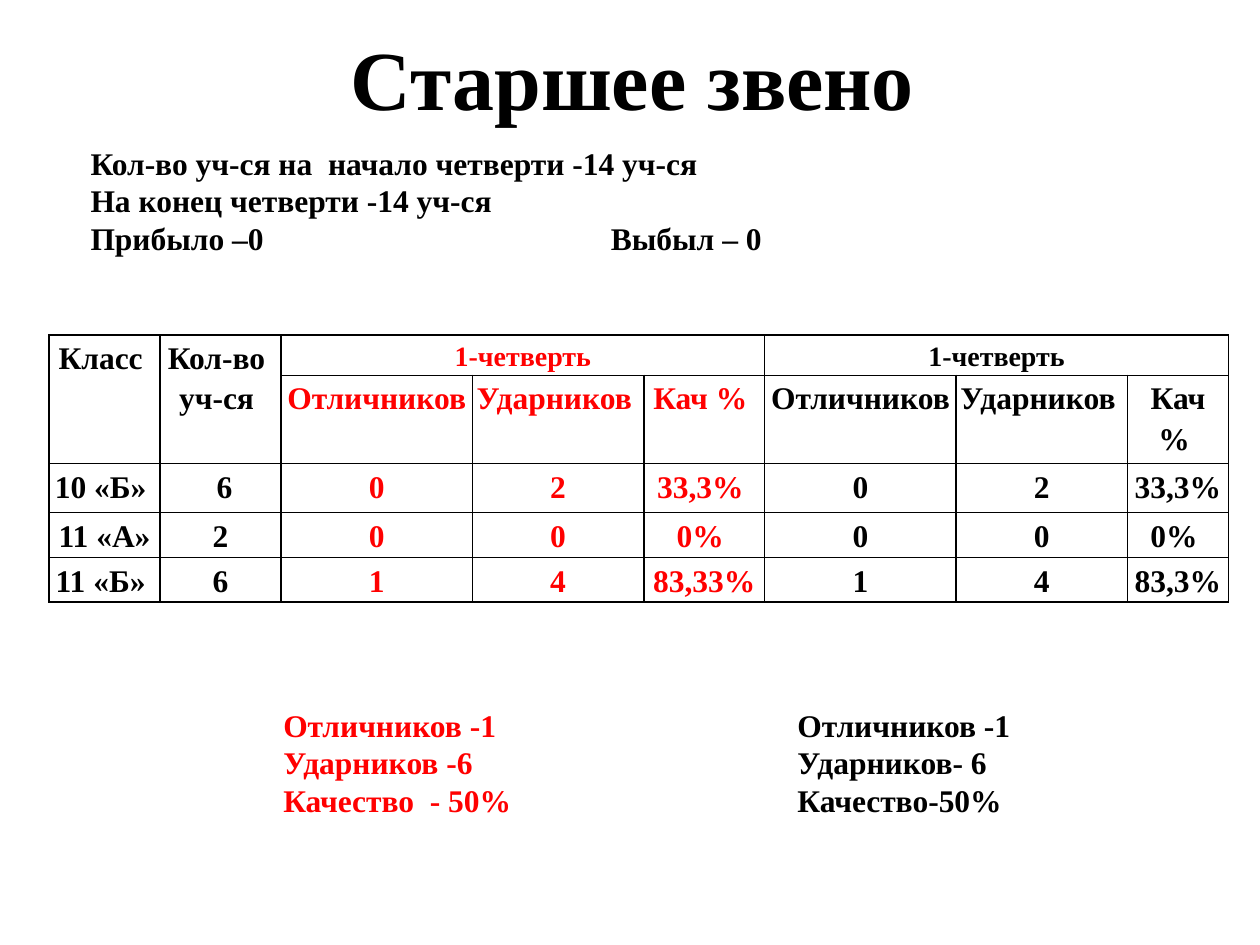
from lxml.etree import SubElement
from pptx import Presentation
from pptx.dml.color import RGBColor
from pptx.enum.text import MSO_ANCHOR, PP_ALIGN
from pptx.oxml.ns import qn
from pptx.util import Inches, Pt

# Content
TITLE = "Старшее звено"
INTRO = [
    ["Кол-во уч-ся на  начало четверти -14 уч-ся"],
    ["На конец четверти -14 уч-ся"],
    ["Прибыло –0", "\tВыбыл – 0"],
]
TERM = "1-четверть"
HEADS = ["Отличников ", "Ударников ", "Кач % "]
GRID = [
    ["Класс ", "Кол-во \nуч-ся ", TERM, "", "", TERM, "", ""],
    ["", "", *HEADS, *HEADS],
    ["10 «Б» ", " 6", "0", "2", "33,3% ", "0", "2", "33,3% "],
    ["11 «А»", "2", "0", "0", "0% ", "0", "0", "0% "],
    ["11 «Б» ", "6", "1", "4", "83,33%", "1", "4", "83,3%"],
]
MERGES = [(0, 0, 1, 0), (0, 1, 1, 1), (0, 2, 0, 4), (0, 5, 0, 7)]
TOTALS = [
    ["\tОтличников -1", "\tОтличников -1"],
    ["\tУдарников -6", "\tУдарников- 6"],
    ["\tКачество  - 50%", "\tКачество-50%"],
]

# Layout in inches
COLS = [0.88, 0.96, 1.52, 1.36, 0.96, 1.52, 1.36, 0.8]
ROWS = [0.32, 0.7, 0.39, 0.35, 0.35]
RED_COLS = range(2, 5)

THEME = {
    "font": "Times New Roman",
    "black": RGBColor(0, 0, 0),
    "red": RGBColor(255, 0, 0),
    "title": 48,
    "body": 18,
    "term": 16,
}


def add_run(para, text, size="body", color="black"):
    run = para.add_run()
    run.text = text
    font = run.font
    font.name, font.size, font.bold = THEME["font"], Pt(THEME[size]), True
    font.color.rgb = THEME[color]


def set_tabs(para, stops):
    tabs = SubElement(para._p.get_or_add_pPr(), qn("a:tabLst"))
    for stop in stops:
        SubElement(tabs, qn("a:tab"), pos=str(Inches(stop)), algn="l")


def add_text(slide, box, lines, colors=("black", "black"), size="body",
             tabs=(), align=PP_ALIGN.LEFT, wrap=True):
    frame = slide.shapes.add_textbox(*map(Inches, box)).text_frame
    frame.word_wrap = wrap
    for i, line in enumerate(lines):
        para = frame.add_paragraph() if i else frame.paragraphs[0]
        para.alignment = align
        if tabs:
            set_tabs(para, tabs)
        for text, color in zip(line, colors):
            add_run(para, text, size, color)


def add_edges(cell):
    props = cell._tc.get_or_add_tcPr()
    for i, side in enumerate(("lnL", "lnR", "lnT", "lnB")):
        line = SubElement(props, qn(f"a:{side}"), w=str(Pt(1)))
        fill = SubElement(line, qn("a:solidFill"))
        SubElement(fill, qn("a:srgbClr"), val=str(THEME["black"]))
        props.insert(i, line)


def fill_cell(cell, text, size, color):
    cell.margin_left = cell.margin_right = Inches(0.03)
    cell.margin_top, cell.margin_bottom = Inches(0.01), 0
    cell.vertical_anchor = MSO_ANCHOR.TOP
    cell.fill.background()
    add_edges(cell)
    for i, line in enumerate(text.split("\n")):
        frame = cell.text_frame
        para = frame.add_paragraph() if i else frame.paragraphs[0]
        para.alignment, para.line_spacing = PP_ALIGN.CENTER, 1.15
        if line:
            add_run(para, line, size, color)


def add_grid(slide, left, top):
    table = slide.shapes.add_table(
        len(ROWS), len(COLS), Inches(left), Inches(top),
        Inches(sum(COLS)), Inches(sum(ROWS))).table
    table.first_row = table.horz_banding = False
    for col, width in zip(table.columns, COLS):
        col.width = Inches(width)
    for row, height in zip(table.rows, ROWS):
        row.height = Inches(height)
    for r, texts in enumerate(GRID):
        for c, text in enumerate(texts):
            fill_cell(table.cell(r, c), text,
                      "term" if text == TERM else "body",
                      "red" if c in RED_COLS else "black")
    for r, c, end_r, end_c in MERGES:
        table.cell(r, c).merge(table.cell(end_r, end_c))


def main():
    deck = Presentation()
    deck.slide_width, deck.slide_height = Inches(10), Inches(7.5)
    slide = deck.slides.add_slide(deck.slide_layouts[6])

    # Title and intake
    add_text(slide, (2.66, 0.16, 4.72, 0.91), [[TITLE]], size="title",
             align=PP_ALIGN.CENTER, wrap=False)
    add_text(slide, (0.62, 1.09, 7.89, 1.31), INTRO, tabs=[4.13])

    # Results by class
    add_grid(slide, 0.39, 2.66)

    # Totals for both terms
    add_text(slide, (1.09, 5.55, 8.44, 1.31), TOTALS, ("red", "black"),
             tabs=[1.06, 5.14])
    deck.save("out.pptx")


if __name__ == "__main__":
    main()
